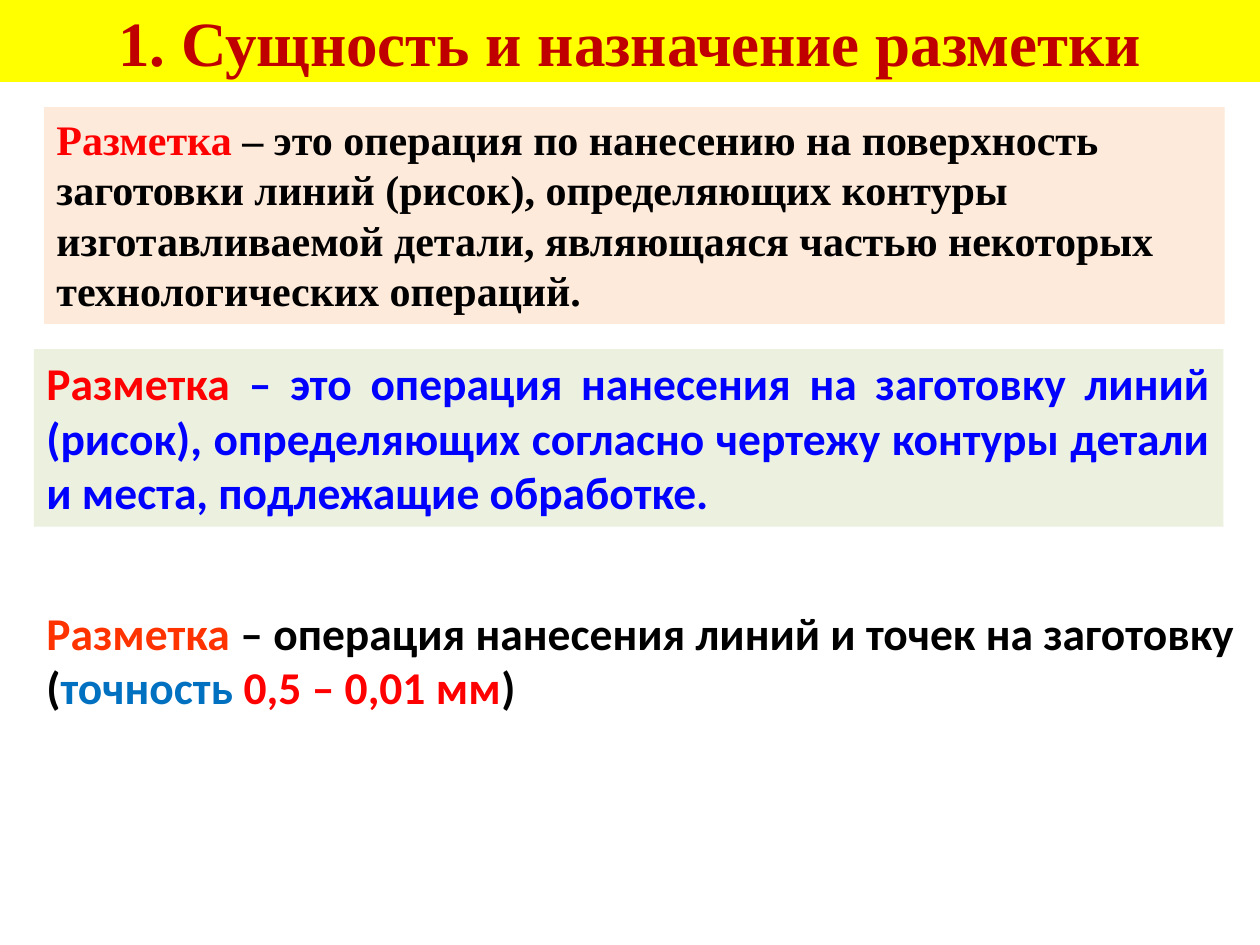
from dataclasses import dataclass
from typing import Optional

from pptx import Presentation
from pptx.dml.color import RGBColor
from pptx.enum.shapes import MSO_SHAPE
from pptx.enum.text import MSO_ANCHOR, PP_ALIGN
from pptx.util import Inches, Pt

YELLOW = RGBColor(0xFF, 0xFF, 0x00)
PEACH = RGBColor(0xFD, 0xEA, 0xDA)
PALE_GREEN = RGBColor(0xEB, 0xF1, 0xDE)
DARK_RED = RGBColor(0xC0, 0x00, 0x00)
RED = RGBColor(0xFF, 0x00, 0x00)
ORANGE_RED = RGBColor(0xFF, 0x33, 0x00)
BLUE = RGBColor(0x00, 0x00, 0xFF)
MID_BLUE = RGBColor(0x00, 0x70, 0xC0)
BLACK = RGBColor(0x00, 0x00, 0x00)

SERIF = "Times New Roman"
SANS = "Calibri"


@dataclass(frozen=True)
class Panel:
    left: float
    top: float
    width: float
    height: float
    font: str
    size: int
    runs: tuple[tuple[str, RGBColor], ...]
    fill: Optional[RGBColor] = None
    align: PP_ALIGN = PP_ALIGN.LEFT
    anchor: MSO_ANCHOR = MSO_ANCHOR.TOP
    space_before: float = 0


# Heading band and the three definitions
PANELS = (
    Panel(0, 0, 10, 0.65, SERIF, 36,
          (("1. Сущность и назначение разметки", DARK_RED),),
          fill=YELLOW, align=PP_ALIGN.CENTER, anchor=MSO_ANCHOR.MIDDLE),
    Panel(0.35, 0.85, 9.37, 1.72, SERIF, 24,
          (("Разметка", RED),
           (" – это операция по нанесению на поверхность заготовки линий "
            "(рисок), определяющих контуры изготавливаемой детали, являющаяся "
            "частью некоторых технологических операций.", BLACK)),
          fill=PEACH, space_before=4.8),
    Panel(0.27, 2.77, 9.44, 1.41, SANS, 26,
          (("Разметка ", RED),
           ("– это операция нанесения на заготовку линий (рисок), определяющих "
            "согласно чертежу контуры детали и места, подлежащие обработке.", BLUE)),
          fill=PALE_GREEN, align=PP_ALIGN.JUSTIFY),
    Panel(0.27, 4.75, 9.73, 0.98, SANS, 26,
          (("Разметка", ORANGE_RED),
           (" – операция нанесения линий и точек на заготовку (", BLACK),
           ("точность ", MID_BLUE),
           ("0,5 – 0,01 мм", RED),
           (")", BLACK))),
)


def draw_panel(slide, panel: Panel) -> None:
    box = [Inches(v) for v in (panel.left, panel.top, panel.width, panel.height)]
    if panel.fill is None:
        shape = slide.shapes.add_textbox(*box)
    else:
        shape = slide.shapes.add_shape(MSO_SHAPE.RECTANGLE, *box)
        shape.shadow.inherit = False
        shape.fill.solid()
        shape.fill.fore_color.rgb = panel.fill
        shape.line.fill.background()

    frame = shape.text_frame
    frame.word_wrap = True
    frame.vertical_anchor = panel.anchor
    paragraph = frame.paragraphs[0]
    paragraph.alignment = panel.align
    paragraph.space_before = Pt(panel.space_before)
    for text, color in panel.runs:
        run = paragraph.add_run()
        run.text = text
        run.font.name = panel.font
        run.font.size = Pt(panel.size)
        run.font.bold = True
        run.font.color.rgb = color


def main() -> None:
    deck = Presentation()
    deck.slide_width, deck.slide_height = Inches(10), Inches(7.5)
    slide = deck.slides.add_slide(deck.slide_layouts[6])
    for panel in PANELS:
        draw_panel(slide, panel)
    deck.save("out.pptx")


if __name__ == "__main__":
    main()
